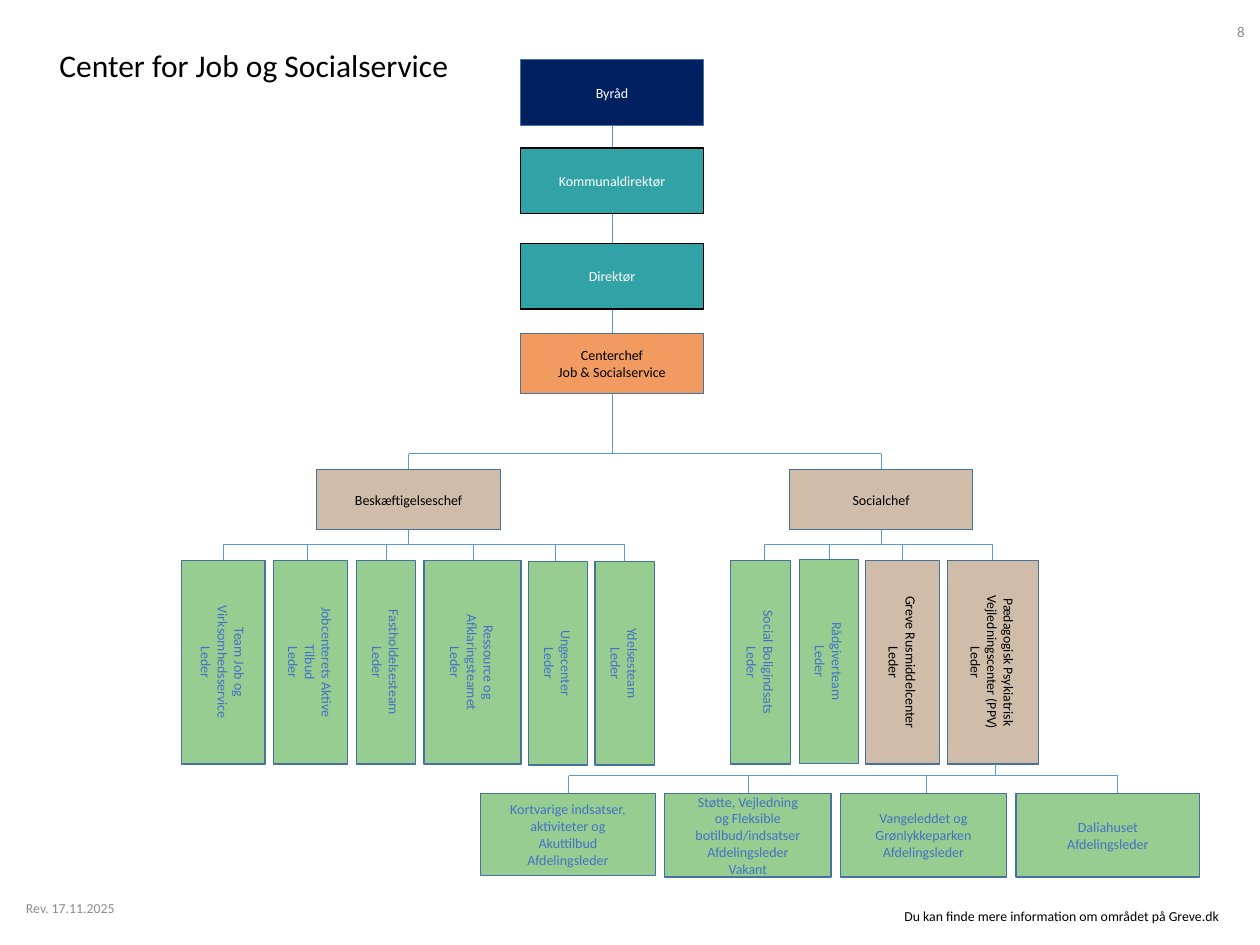
from dataclasses import dataclass

from lxml.etree import SubElement
from pptx import Presentation
from pptx.dml.color import RGBColor
from pptx.enum.shapes import MSO_CONNECTOR, MSO_SHAPE
from pptx.enum.text import MSO_ANCHOR, MSO_AUTO_SIZE, PP_ALIGN
from pptx.oxml.ns import qn
from pptx.util import Inches, Pt

FONT = "Calibri"
NAVY, TEAL, ORANGE, SAND, GREEN = "002060", "31A2A5", "F19B61", "CFBDA9", "97CD91"
WHITE, BLACK, BLUE, GREY = "FFFFFF", "000000", "4472C4", "8C8C8C"
EDGE, LINK = "43739E", "5B9BD5"

AXIS = 6.8  # centre line of the top management
TEAM_HEIGHT = 2.26


@dataclass
class Box:
    cx: float
    cy: float
    w: float
    h: float
    lines: list[str]
    fill: str = GREEN
    color: str = BLUE
    edge: str = EDGE
    size: float = 11.2
    rotation: int = 0


@dataclass
class Branch:
    """A parent line down to a bar, and drops from the bar to the children."""
    parent_x: float
    parent_bottom: float
    bar_y: float
    child_top: float
    drops: list[float]


def team(cx: float, width: float, name: str, cy: float = 7.36, **style) -> Box:
    """A box turned a quarter, so its text runs downwards."""
    return Box(cx, cy, TEAM_HEIGHT, width, [name, "Leder"], rotation=90, **style)


TOP = [
    Box(AXIS, 1.03, 2.04, 0.73, ["Byråd"], NAVY, WHITE),
    Box(AXIS, 2.01, 2.04, 0.73, ["Kommunaldirektør"], TEAL, WHITE, BLACK),
    Box(AXIS, 3.07, 2.04, 0.73, ["Direktør"], TEAL, WHITE, BLACK),
    Box(AXIS, 4.04, 2.04, 0.66, ["Centerchef", "Job & Socialservice"], ORANGE, BLACK),
]
CHIEFS = [
    Box(4.54, 5.55, 2.04, 0.66, ["Beskæftigelseschef"], SAND, BLACK),
    Box(9.79, 5.55, 2.04, 0.66, ["Socialchef"], SAND, BLACK),
]
TEAMS = [
    team(2.48, 0.93, "Team Job og Virksomhedsservice"),
    team(3.45, 0.82, "Jobcenterets Aktive Tilbud"),
    team(4.29, 0.66, "Fastholdelsesteam"),
    team(5.25, 1.08, "Ressource og Afklaringsteamet"),
    team(6.2, 0.66, "Ungecenter", 7.37),
    team(6.94, 0.66, "Ydelsesteam", 7.37),
    team(8.45, 0.66, "Social Boligindsats"),
    team(9.21, 0.66, "Rådgiverteam", 7.35),
    team(10.03, 0.82, "Greve Rusmiddelcenter", fill=SAND, color=BLACK),
    team(11.03, 1.01, "Pædagogisk Psykiatrisk Vejledningscenter (PPV)",
         fill=SAND, color=BLACK, size=11),
]
UNITS = [
    Box(6.31, 9.27, 1.95, 0.91,
        ["Kortvarige indsatser, aktiviteter og Akuttilbud", "Afdelingsleder"]),
    Box(8.31, 9.28, 1.85, 0.93,
        ["Støtte, Vejledning og Fleksible botilbud/indsatser", "Afdelingsleder", "Vakant"]),
    Box(10.26, 9.28, 1.85, 0.93, ["Vangeleddet og Grønlykkeparken", "Afdelingsleder"]),
    Box(12.31, 9.28, 2.04, 0.93, ["Daliahuset", "Afdelingsleder"]),
]
BRANCHES = [
    Branch(AXIS, 4.35, 5.04, 5.22, [4.54, 9.79]),
    Branch(4.54, 5.88, 6.05, 6.23, [2.48, 3.42, 4.29, 5.26, 6.17, 6.94]),
    Branch(9.79, 5.88, 6.05, 6.23, [8.49, 9.21, 10.03, 11.03]),
    Branch(11.06, 8.47, 8.62, 8.83, [6.32, 8.32, 10.29, 12.42]),
]


def rgb(color: str) -> RGBColor:
    return RGBColor.from_string(color)


def write(tf, lines: list[str], size: float, color: str, align=PP_ALIGN.LEFT) -> None:
    tf.word_wrap = True
    for i, line in enumerate(lines):
        p = tf.paragraphs[0] if i == 0 else tf.add_paragraph()
        p.alignment = align
        r = p.add_run()
        r.text = line
        r.font.name = FONT
        r.font.size = Pt(size)
        r.font.color.rgb = rgb(color)


def add_line(s, x1: float, y1: float, x2: float, y2: float) -> None:
    line = s.shapes.add_connector(
        MSO_CONNECTOR.STRAIGHT, Inches(x1), Inches(y1), Inches(x2), Inches(y2))
    line.line.color.rgb = rgb(LINK)
    line.line.width = Pt(0.5)
    SubElement(line._element.spPr, qn("a:effectLst"))


def add_branch(s, branch: Branch) -> None:
    add_line(s, branch.parent_x, branch.parent_bottom, branch.parent_x, branch.bar_y)
    add_line(s, branch.drops[0], branch.bar_y, branch.drops[-1], branch.bar_y)
    for x in branch.drops:
        add_line(s, x, branch.bar_y, x, branch.child_top)


def add_box(s, box: Box) -> None:
    sp = s.shapes.add_shape(
        MSO_SHAPE.RECTANGLE, Inches(box.cx - box.w / 2), Inches(box.cy - box.h / 2),
        Inches(box.w), Inches(box.h))
    sp.rotation = box.rotation
    sp.shadow.inherit = False
    sp.fill.solid()
    sp.fill.fore_color.rgb = rgb(box.fill)
    sp.line.color.rgb = rgb(box.edge)
    sp.line.width = Pt(1)
    tf = sp.text_frame
    tf.margin_left = tf.margin_right = Inches(0.31)
    tf.margin_top = tf.margin_bottom = Inches(0.16)
    tf.vertical_anchor = MSO_ANCHOR.MIDDLE
    write(tf, box.lines, box.size, box.color, PP_ALIGN.CENTER)


def add_note(s, x: float, y: float, w: float, h: float, text: str, size: float,
             color: str, align=PP_ALIGN.LEFT, anchor=MSO_ANCHOR.MIDDLE) -> None:
    sp = s.shapes.add_textbox(Inches(x), Inches(y), Inches(w), Inches(h))
    sp.text_frame.vertical_anchor = anchor
    write(sp.text_frame, [text], size, color, align)


def add_title(s, text: str) -> None:
    sp = s.shapes.title
    sp.left, sp.top, sp.width, sp.height = map(Inches, (0.56, 0.46, 4.72, 0.53))
    tf = sp.text_frame
    tf.auto_size = MSO_AUTO_SIZE.NONE
    tf.vertical_anchor = MSO_ANCHOR.TOP
    write(tf, [text], 25.2, BLACK)


def main() -> None:
    prs = Presentation()
    prs.slide_width, prs.slide_height = Inches(14), Inches(10.5)
    s = prs.slides.add_slide(prs.slide_layouts[5])

    add_title(s, "Center for Job og Socialservice")
    for upper, lower in zip(TOP, TOP[1:]):
        add_line(s, AXIS, upper.cy + upper.h / 2, AXIS, lower.cy - lower.h / 2)
    for branch in BRANCHES:
        add_branch(s, branch)
    for box in TOP + CHIEFS + TEAMS + UNITS:
        add_box(s, box)

    add_note(s, 0.19, 9.93, 2.48, 0.32, "Rev. 17.11.2025", 11, GREY)
    add_note(s, 9.95, 10.04, 4.18, 0.29,
             "Du kan finde mere information om området på Greve.dk", 11, BLACK,
             anchor=MSO_ANCHOR.TOP)
    add_note(s, 13.5, 0.07, 0.43, 0.56, "8", 12, GREY, PP_ALIGN.RIGHT)
    prs.save("out.pptx")


if __name__ == "__main__":
    main()
